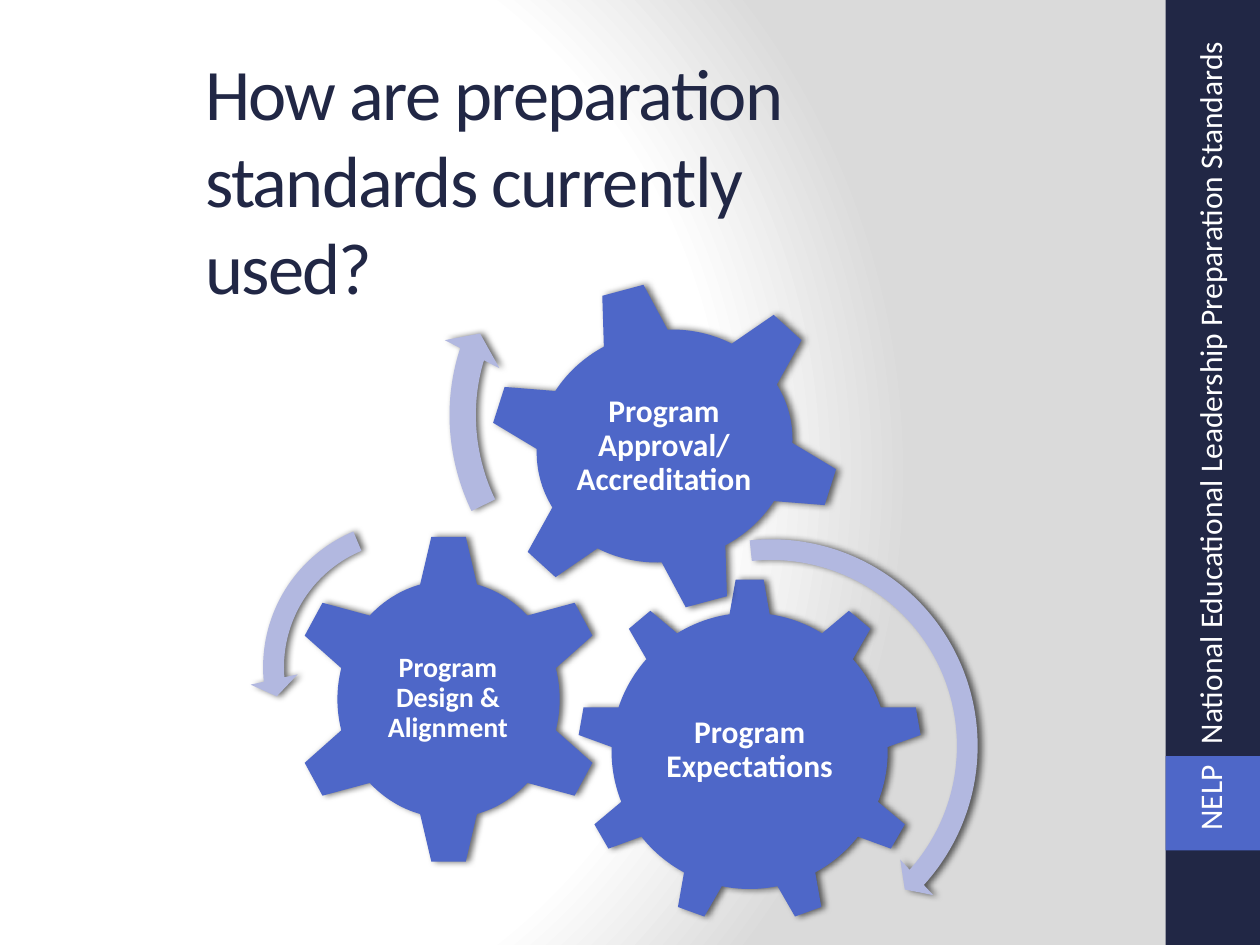
from dataclasses import dataclass

from pptx import Presentation
from pptx.dml.color import RGBColor
from pptx.enum.shapes import MSO_SHAPE as Shape
from pptx.enum.text import MSO_ANCHOR as Anchor, MSO_AUTO_SIZE as AutoSize, PP_ALIGN as Align
from pptx.oxml import parse_xml
from pptx.oxml.ns import nsdecls

PX = 9144  # 100 px to the inch
TITLE_ONLY = 5


@dataclass(frozen=True)
class Theme:
    font: str = "Calibri"
    navy: str = "212745"
    blue: str = "4E67C8"
    lilac: str = "B2B8E0"
    white: str = "FFFFFF"
    grey: str = "DADADA"
    title_size: float = 41.4
    text_size: int = 18
    small_size: int = 16


@dataclass(frozen=True)
class Box:
    left: int
    top: int
    width: int
    height: int

    def inner(self, left, top, width, height):
        """Box whose left and top are measured from this one."""
        return Box(self.left + left, self.top + top, width, height)

    def centred(self, width, height):
        return self.inner((self.width - width) // 2, (self.height - height) // 2, width, height)

    def emu(self):
        return [side * PX for side in (self.left, self.top, self.width, self.height)]


THEME = Theme()


def add_run(paragraph, text, size, colour, bold=False, spacing=None):
    """Add one run; spacing is the tracking in points."""
    run = paragraph.add_run()
    run.text = text
    font = run.font
    font.name, font.size, font.bold = THEME.font, int(size * 12700), bold
    font.color.rgb = RGBColor.from_string(colour)
    if spacing is not None:
        run._r.get_or_add_rPr().set("spc", str(spacing * 100))


def add_filled(shapes, kind, box, colour):
    shape = shapes.add_shape(kind, *box.emu())
    shape.shadow.inherit = False
    shape.fill.solid()
    shape.fill.fore_color.rgb = RGBColor.from_string(colour)
    shape.line.fill.background()
    return shape


def cast_shadow(shape):
    effects = shape._element.spPr.find("{*}effectLst")
    effects.append(parse_xml(
        f'<a:outerShdw {nsdecls("a")} blurRad="50800" dist="25400" dir="0" rotWithShape="0">'
        '<a:srgbClr val="000000"><a:alpha val="60000"/></a:srgbClr></a:outerShdw>'))


def set_background(slide):
    stops = [(0, THEME.white), (75, THEME.white), (100, THEME.grey)]
    gradient = "".join(
        f'<a:gs pos="{place * 1000}"><a:srgbClr val="{colour}"/></a:gs>' for place, colour in stops)
    slide.element.cSld.insert(0, parse_xml(
        f'<p:bg {nsdecls("p", "a")}><p:bgPr><a:gradFill rotWithShape="1">'
        f'<a:gsLst>{gradient}</a:gsLst><a:path path="circle">'
        '<a:fillToRect l="20000" t="50000" r="100000" b="50000"/></a:path>'
        '</a:gradFill><a:effectLst/></p:bgPr></p:bg>'))


def set_title(slide, box, text):
    title = slide.shapes.title
    title.left, title.top, title.width, title.height = box.emu()
    frame = title.text_frame
    frame.auto_size, frame.word_wrap = AutoSize.NONE, True
    frame.vertical_anchor = Anchor.MIDDLE
    heading = frame.paragraphs[0]
    heading.alignment = Align.LEFT
    add_run(heading, text, THEME.title_size, THEME.navy, spacing=-1)


def add_sidebar(slide, box, acronym, full_name):
    """Navy band with a blue square and a line of text that reads upwards."""
    add_filled(slide.shapes, Shape.RECTANGLE, box, THEME.navy)
    add_filled(slide.shapes, Shape.RECTANGLE, box.inner(0, 600, box.width, box.width), THEME.blue)
    banner = slide.shapes.add_textbox(*box.inner(15, 24, 50, 645).emu())
    frame = banner.text_frame
    frame.auto_size, frame.word_wrap = AutoSize.SHAPE_TO_FIT_TEXT, False
    frame._txBody.bodyPr.set("vert", "vert270")
    line = frame.paragraphs[0]
    add_run(line, acronym, THEME.text_size, THEME.white)
    add_run(line, " ", THEME.text_size, THEME.white, spacing=8)
    add_run(line, full_name, THEME.text_size, THEME.white)


def add_gear(shapes, kind, box, label_size, text, text_size, rotation=0):
    """Gear with an upright label in its middle."""
    gear = add_filled(shapes, kind, box, THEME.blue)
    gear.rotation = rotation
    cast_shadow(gear)
    label = shapes.add_textbox(*box.centred(*label_size).emu())
    frame = label.text_frame
    frame.word_wrap, frame.vertical_anchor = True, Anchor.MIDDLE
    frame.margin_left = frame.margin_right = frame.margin_top = frame.margin_bottom = 3 * PX
    caption = frame.paragraphs[0]
    caption.alignment, caption.line_spacing = Align.CENTER, 0.9
    add_run(caption, text, text_size, THEME.white, bold=True)


def add_turn_arrow(shapes, kind, box, adjustments, rotation=0):
    arrow = add_filled(shapes, kind, box, THEME.lilac)
    for index, value in enumerate(adjustments):
        arrow.adjustments[index] = value
    arrow.rotation = rotation
    cast_shadow(arrow)


def add_gear_train(slide, box):
    shapes = slide.shapes.add_group_shape().shapes
    add_gear(shapes, Shape.GEAR_9, box.inner(258, 309, 274, 274), (164, 141),
             "Program Expectations", THEME.text_size)
    add_gear(shapes, Shape.GEAR_6, box.inner(30, 273, 252, 264), (125, 133),
             "Program Design & Alignment", THEME.small_size)
    add_gear(shapes, Shape.GEAR_6, box.inner(186, 73, 283, 262), (156, 150),
             "Program Approval/ Accreditation", THEME.text_size, rotation=345)
    # Adjustments: thickness, head angle, end angle, start angle, head width
    add_turn_arrow(shapes, Shape.CIRCULAR_ARROW, box.inner(237, 267, 350, 350),
                   (0.047, 2.99, 25.241, 158.443, 0.055))
    add_turn_arrow(shapes, Shape.LEFT_CIRCULAR_ARROW, box.inner(-2, 252, 255, 255),
                   (0.065, 4.3, 104.891, 148.378, 0.075))
    add_turn_arrow(shapes, Shape.CIRCULAR_ARROW, box.inner(144, 3, 348, 364),
                   (0.06, 3.941, 133.138, 105.082, 0.07), rotation=338.7)


def main():
    deck = Presentation()
    deck.slide_width, deck.slide_height = 1000 * PX, 750 * PX
    slide = deck.slides.add_slide(deck.slide_layouts[TITLE_ONLY])
    set_background(slide)
    set_title(slide, Box(153, 79, 572, 125), "How are preparation standards currently used?")
    add_sidebar(slide, Box(925, 0, 75, 750),
                "NELP", "National Educational Leadership Preparation Standards")
    add_gear_train(slide, Box(200, 150, 590, 600))
    deck.save("out.pptx")


if __name__ == "__main__":
    main()
